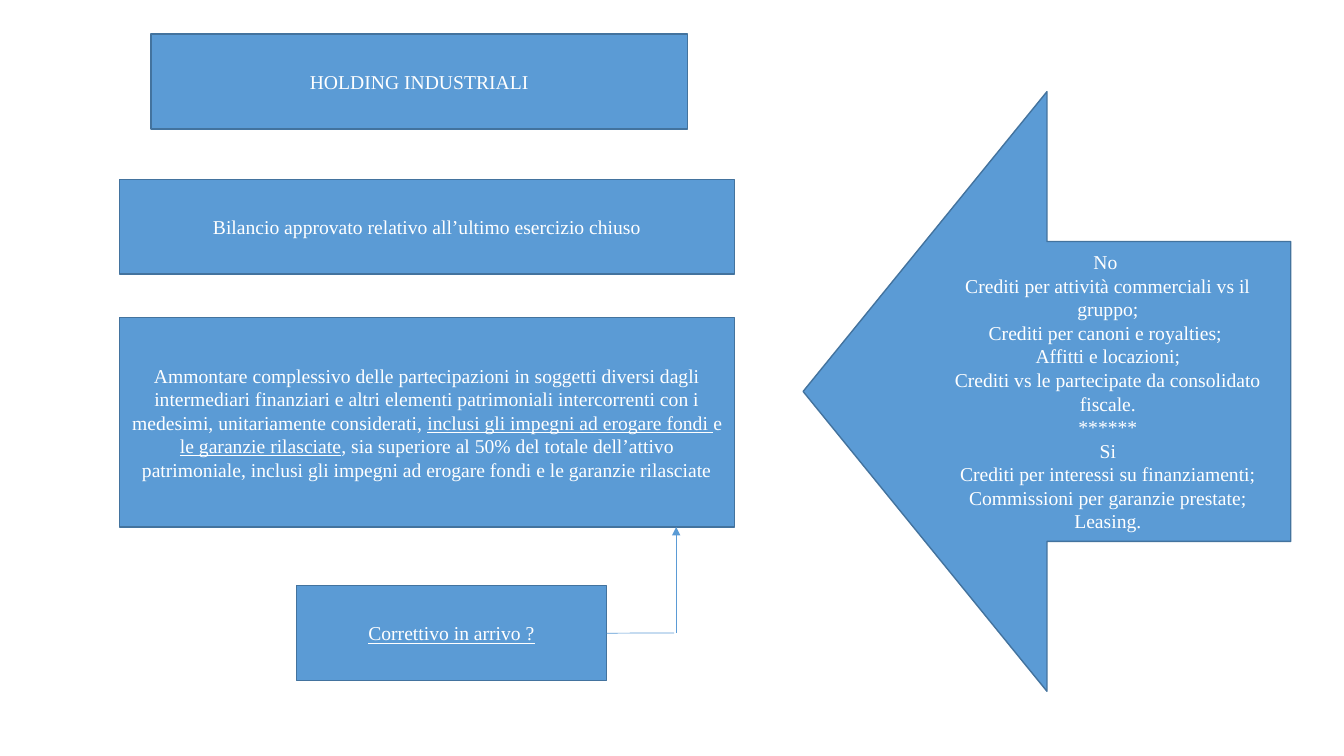
from lxml import etree
from pptx import Presentation
from pptx import util as u
from pptx.dml.color import RGBColor
from pptx.enum import shapes, text
from pptx.oxml import ns

BLUE = RGBColor(0x5B, 0x9B, 0xD5)
DARK_BLUE = RGBColor(0x43, 0x73, 0x9E)
WHITE = RGBColor(0xFF, 0xFF, 0xFF)

COLUMN_LEFT, COLUMN_WIDTH = 3.02, 15.49
BOX_HEIGHT = 2.39

REQUIREMENT = [
    ("Ammontare complessivo delle partecipazioni in soggetti diversi dagli "
     "intermediari finanziari e altri elementi patrimoniali intercorrenti con i "
     "medesimi, unitariamente considerati, ", False),
    ("inclusi gli impegni ad erogare fondi ", True),
    ("e ", False),
    ("le garanzie rilasciate", True),
    (", sia superiore al 50% del totale dell’attivo patrimoniale, inclusi gli "
     "impegni ad erogare fondi e le garanzie rilasciate", False),
]
CREDITS = [
    "No ",
    "Crediti per attività commerciali vs il gruppo;",
    "Crediti per canoni e royalties; ",
    "Affitti e locazioni;",
    "Crediti vs le partecipate da consolidato fiscale.",
    "******",
    "Si",
    "Crediti per interessi su finanziamenti;",
    "Commissioni per garanzie prestate;",
    "Leasing.",
]


class Diagram:
    font_name = "Times New Roman"
    font_size = u.Pt(14)

    def __init__(self, page):
        self.page = page

    def title(self, left, top, width, height, words):
        box = self.page.shapes.title
        box.left, box.top = u.Cm(left), u.Cm(top)
        box.width, box.height = u.Cm(width), u.Cm(height)
        return self.dress(box, [[(words, False)]])

    def block(self, left, top, width, height, paragraphs,
              kind=shapes.MSO_SHAPE.RECTANGLE):
        box = self.page.shapes.add_shape(
            kind, u.Cm(left), u.Cm(top), u.Cm(width), u.Cm(height))
        return self.dress(box, paragraphs)

    def dress(self, box, paragraphs):
        """Style a box and fill it with paragraphs of (words, underlined) pairs."""
        box.shadow.inherit = False
        box.fill.solid()
        box.fill.fore_color.rgb = BLUE
        box.line.color.rgb = DARK_BLUE
        box.line.width = u.Pt(1)
        frame = box.text_frame
        frame.word_wrap = True
        frame.auto_size = text.MSO_AUTO_SIZE.NONE
        frame.vertical_anchor = text.MSO_ANCHOR.MIDDLE
        for index, pieces in enumerate(paragraphs):
            para = frame.add_paragraph() if index else frame.paragraphs[0]
            para.alignment = text.PP_ALIGN.CENTER
            para.font.name = self.font_name
            para.font.size = self.font_size
            para.font.color.rgb = WHITE
            for words, underlined in pieces:
                span = para.add_run()
                span.text = words
                if underlined:
                    span.font.underline = True
        return box

    def line(self, x1, y1, x2, y2, arrow=False):
        link = self.page.shapes.add_connector(
            shapes.MSO_CONNECTOR.STRAIGHT, u.Cm(x1), u.Cm(y1), u.Cm(x2), u.Cm(y2))
        link.line.color.rgb = BLUE
        link.line.width = u.Pt(0.5)
        if arrow:
            etree.SubElement(link.line._get_or_add_ln(), ns.qn("a:tailEnd"),
                             type="triangle")
        etree.SubElement(link._element.spPr, ns.qn("a:effectLst"))
        return link


def main():
    deck = Presentation()
    deck.slide_width, deck.slide_height = u.Cm(33.87), u.Cm(19.05)
    title_only = deck.slide_layouts[5]
    diagram = Diagram(deck.slides.add_slide(title_only))

    diagram.title(3.81, 0.86, 13.51, BOX_HEIGHT, "HOLDING INDUSTRIALI")
    diagram.block(COLUMN_LEFT, 4.52, COLUMN_WIDTH, BOX_HEIGHT,
                  [[("Bilancio approvato relativo all’ultimo esercizio chiuso", False)]])
    amendment = diagram.block(7.47, 14.76, 7.82, BOX_HEIGHT,
                              [[("Correttivo in arrivo ?", True)]])
    diagram.block(COLUMN_LEFT, 8, COLUMN_WIDTH, 5.28, [REQUIREMENT])
    diagram.block(20.24, 2.31, 12.29, 15.11, [[(words, False)] for words in CREDITS],
                  shapes.MSO_SHAPE.LEFT_ARROW)

    diagram.line(15.29, 15.95, 16.99, 15.95).begin_connect(amendment, 3)
    diagram.line(17.04, 15.95, 17.04, 13.28, arrow=True)
    deck.save("out.pptx")


if __name__ == "__main__":
    main()
